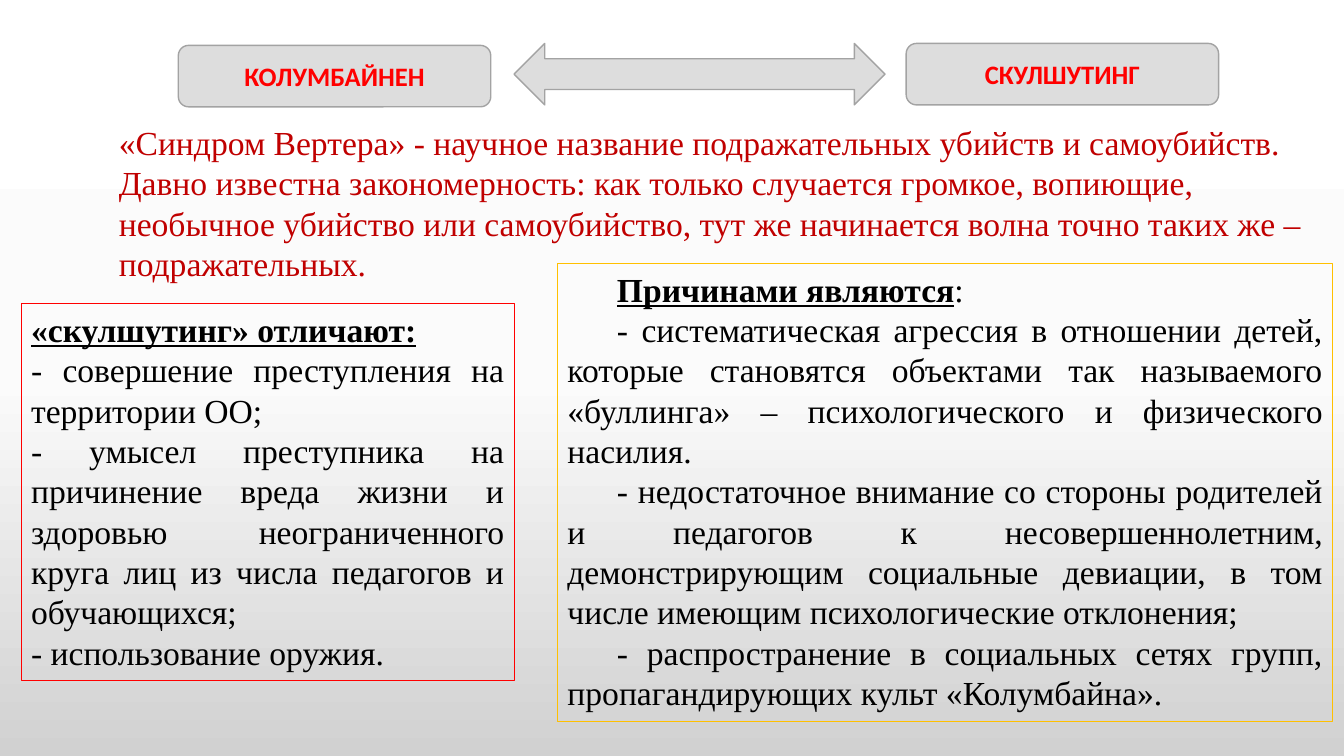
from copy import deepcopy

from pptx import Presentation
from pptx.dml.color import RGBColor
from pptx.enum import shapes, text
from pptx.util import Pt

COLORS = {
    "red": "FF0000", "dark_red": "C00000", "amber": "FFC000", "black": "000000",
    "grey": "DDDDDD", "grey_line": "A3A3A3",
}
BACKGROUND = [(0, "FFFFFF"), (0.5, "FBFBFB"), (1, "D1D1D1")]

# Content: each paragraph is a list of (text, is_heading) spans
SYNDROME = [[(
    "«Синдром Вертера» - научное название подражательных убийств и самоубийств. "
    "Давно известна закономерность: как только случается громкое, вопиющие, "
    "необычное убийство или самоубийство, тут же начинается волна точно таких же "
    "– подражательных.", False)]]
FEATURES = [
    [("«скулшутинг» отличают:", True)],
    [("- совершение преступления на территории ОО;", False)],
    [("- умысел преступника на причинение вреда жизни и здоровью неограниченного "
      "круга лиц из числа педагогов и обучающихся;", False)],
    [("- использование оружия.", False)],
]
CAUSES = [
    [("Причинами являются", True), (":", False)],
    [("- систематическая агрессия в отношении детей, которые становятся объектами "
      "так называемого «буллинга» – психологического и физического насилия.", False)],
    [("- недостаточное внимание со стороны родителей и педагогов к "
      "несовершеннолетним, демонстрирующим социальные девиации, в том числе "
      "имеющим психологические отклонения;", False)],
    [("- распространение в социальных сетях групп, пропагандирующих культ "
      "«Колумбайна».", False)],
]
# Text, left, top
TERMS = [("КОЛУМБАЙНЕН", 127.4, 32.4), ("СКУЛШУТИНГ", 647.3, 31)]
TERM_SIZE = (223.2, 43.9)

deck = Presentation()
deck.slide_width, deck.slide_height = Pt(960), Pt(540)
page = deck.slides.add_slide(deck.slide_layouts[6])


def rgb(name):
    return RGBColor.from_string(COLORS[name])


def add_box(kind, left, top, width, height, line, fill=None, weight=0.75):
    box = page.shapes.add_shape(kind, Pt(left), Pt(top), Pt(width), Pt(height))
    box.shadow.inherit = False
    if fill:
        box.fill.solid()
        box.fill.fore_color.rgb = rgb(fill)
    else:
        box.fill.background()
    box.line.color.rgb = rgb(line)
    box.line.width = Pt(weight)
    return box


def write(box, paragraphs, font="Times New Roman", size=24, color="black", bold=False,
          align=text.PP_ALIGN.JUSTIFY, anchor=text.MSO_ANCHOR.TOP, indent=0,
          fit=text.MSO_AUTO_SIZE.SHAPE_TO_FIT_TEXT):
    frame = box.text_frame
    frame.word_wrap = True
    frame.auto_size = fit
    frame.vertical_anchor = anchor
    for number, spans in enumerate(paragraphs):
        para = frame.add_paragraph() if number else frame.paragraphs[0]
        para.alignment = align
        if indent:
            properties = para._p.get_or_add_pPr()
            properties.set("marL", "0")
            properties.set("indent", str(Pt(indent)))
        for words, heading in spans:
            span = para.add_run()
            span.text = words
            span.font.name, span.font.size = font, Pt(size)
            span.font.bold, span.font.underline = bold or heading, heading
            span.font.color.rgb = rgb(color)


# Background gradient, top to bottom
fill = page.background.fill
fill.gradient()
fill.gradient_angle = 270
last_stop = fill._fill._gradFill.gsLst[-1]
last_stop.addnext(deepcopy(last_stop))
for stop, (position, color) in zip(fill.gradient_stops, BACKGROUND):
    stop.position = position
    stop.color.rgb = RGBColor.from_string(color)

# Definition
definition = page.shapes.add_textbox(Pt(77.8), Pt(83.5), Pt(874.1), Pt(123.8))
write(definition, SYNDROME, color="dark_red", align=text.PP_ALIGN.LEFT)

# Framed lists
kinds = shapes.MSO_SHAPE
features = add_box(kinds.RECTANGLE, 15.1, 217.1, 352.1, 269.3, "red")
write(features, FEATURES)
causes = add_box(kinds.RECTANGLE, 398.2, 188.3, 553.7, 326.9, "amber")
write(causes, CAUSES, indent=35.4)

# Terms joined by the double arrow
for term, left, top in TERMS:
    box = add_box(kinds.ROUNDED_RECTANGLE, left, top, *TERM_SIZE, "grey_line", "grey", 1)
    write(box, [[(term, False)]], font="Calibri", size=19, color="red", bold=True,
          align=text.PP_ALIGN.CENTER, anchor=text.MSO_ANCHOR.MIDDLE,
          fit=text.MSO_AUTO_SIZE.NONE)
add_box(kinds.LEFT_RIGHT_ARROW, 367.2, 31, 265, 43.9, "grey_line", "grey", 1)

deck.save("out.pptx")
